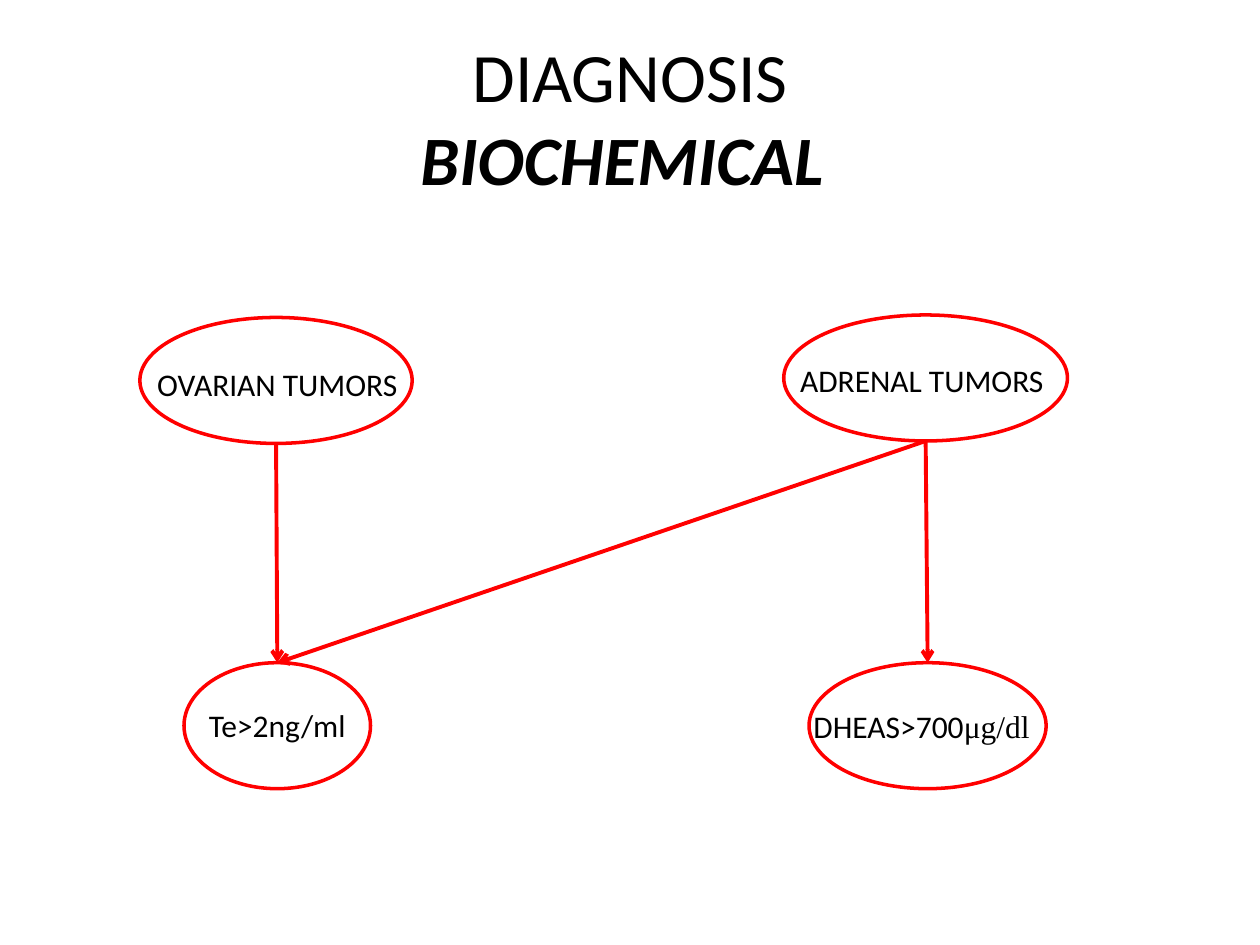
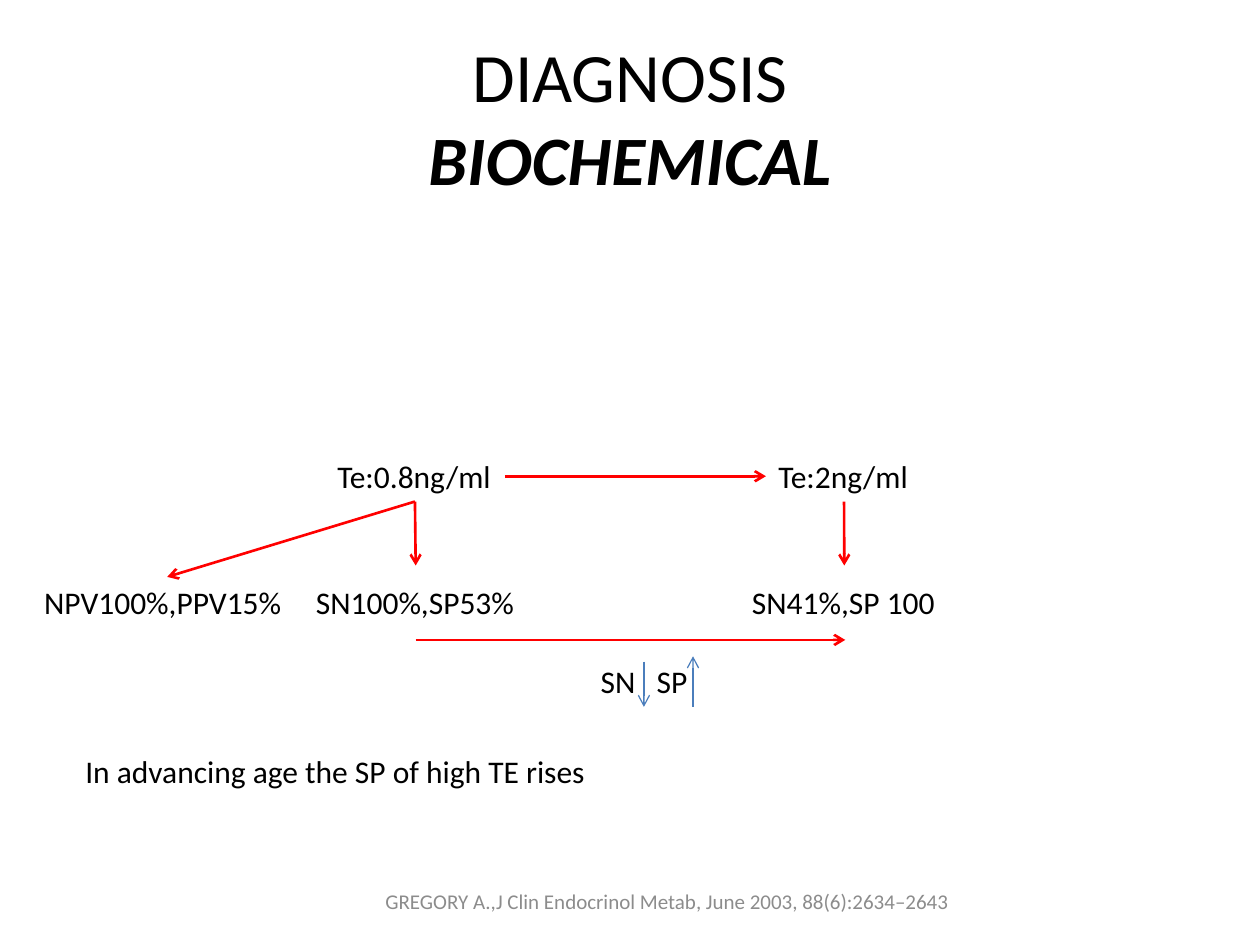
from lxml.etree import SubElement
from pptx import Presentation
from pptx.dml.color import RGBColor
from pptx.enum.shapes import MSO_CONNECTOR, MSO_SHAPE
from pptx.enum.text import MSO_ANCHOR, MSO_AUTO_SIZE, PP_ALIGN
from pptx.oxml.ns import qn
from pptx.util import Cm, Pt

# Shared style
RED, BLUE, BLACK, GREY = "FF0000", "4B7EBC", "000000", "8C8C8C"
FONT, SYMBOL_FONT = "Calibri", "Times New Roman"
TOP, LEFT, BOTTOM, RIGHT = range(4)


def add_text(page, left, top, width, runs, size=18, color=BLACK):
    """Add a one-line text box; runs is a list of (text, font) pairs."""
    box = page.shapes.add_textbox(Cm(left), Cm(top), Cm(width), Cm(1.02))
    box.text_frame.word_wrap = False
    box.text_frame.auto_size = MSO_AUTO_SIZE.SHAPE_TO_FIT_TEXT
    for text, font in runs:
        span = box.text_frame.paragraphs[0].add_run()
        span.text = text
        span.font.name = font
        span.font.size = Pt(size)
        span.font.color.rgb = RGBColor.from_string(color)
    return box


def add_arrow(page, start, end, color=RED, width=1.5):
    """Draw an arrow; each end is an (x, y) point in cm or a (shape, side) joint."""
    arrow = page.shapes.add_connector(MSO_CONNECTOR.STRAIGHT, 0, 0, 0, 0)
    if hasattr(start[0], "shape_id"):
        arrow.begin_connect(*start)
    else:
        arrow.begin_x, arrow.begin_y = Cm(start[0]), Cm(start[1])
    if hasattr(end[0], "shape_id"):
        arrow.end_connect(*end)
    else:
        arrow.end_x, arrow.end_y = Cm(end[0]), Cm(end[1])
    arrow.line.color.rgb = RGBColor.from_string(color)
    arrow.line.width = Pt(width)
    SubElement(arrow.line._get_or_add_ln(), qn("a:tailEnd"), type="arrow")
    SubElement(arrow._element.spPr, qn("a:effectLst"))


deck = Presentation()
deck.slide_width, deck.slide_height = Cm(25.4), Cm(19.05)

# Pages with the common title
pages = []
for subtitle in ("BIOCHEMICAL ", "BIOCHEMICAL"):
    page = deck.slides.add_slide(deck.slide_layouts[5])
    title = page.shapes.title
    title.left, title.top = Cm(1.27), Cm(0.76)
    title.width, title.height = Cm(22.86), Cm(3.18)
    title.text_frame.vertical_anchor = MSO_ANCHOR.MIDDLE
    para = title.text_frame.paragraphs[0]
    para.alignment = PP_ALIGN.CENTER
    for text, strong in (("DIAGNOSIS", False), (subtitle, True)):
        if strong:
            para.add_line_break()
        span = para.add_run()
        span.text = text
        span.font.name = FONT
        span.font.size = Pt(39.6)
        span.font.bold = span.font.italic = strong
        span.font.color.rgb = RGBColor.from_string(BLACK)
    pages.append(page)
tumor_page, cutoff_page = pages

# Slide 1: tumors and their hormone thresholds
ovals = {}
for name, left, top, width, text_left, text_top, text_width, runs in (
    ("ovarian", 2.82, 6.4, 5.49, 2.92, 7.24, 5.38, [("OVARIAN TUMORS", FONT)]),
    ("adrenal", 15.8, 6.35, 5.72, 15.88, 7.16, 5.46, [("ADRENAL TUMORS", FONT)]),
    ("testosterone", 3.71, 13.36, 3.76, 3.96, 14.1, 3.3, [("Te>2ng/ml", FONT)]),
    ("dheas", 16.31, 13.36, 4.78, 16.15, 14.12, 4.9,
     [("DHEAS>700", FONT), ("μg/dl", SYMBOL_FONT)]),
):
    oval = tumor_page.shapes.add_shape(
        MSO_SHAPE.OVAL, Cm(left), Cm(top), Cm(width), Cm(2.54))
    oval.shadow.inherit = False
    oval.fill.background()
    oval.line.color.rgb = RGBColor.from_string(RED)
    oval.line.width = Pt(2)
    ovals[name] = oval
    add_text(tumor_page, text_left, text_top, text_width, runs)

for tumor, hormone in (("ovarian", "testosterone"), ("adrenal", "testosterone"),
                       ("adrenal", "dheas")):
    oval = ovals[tumor]
    foot = ((oval.left + oval.width / 2) / Cm(1), (oval.top + oval.height) / Cm(1))
    add_arrow(tumor_page, foot, (ovals[hormone], TOP), width=2.25)

# Slide 2: cutoffs and their test values
labels = {}
for name, left, top, width, text in (
    ("low cutoff", 6.55, 9.09, 3.63, "Te:0.8ng/ml"),
    ("high cutoff", 15.44, 9.09, 3.15, "Te:2ng/ml"),
    ("predictive values", 0.64, 11.63, 5.46, "NPV100%,PPV15%"),
    ("low values", 6.12, 11.63, 4.55, "SN100%,SP53%"),
    ("high values", 14.91, 11.63, 4.24, "SN41%,SP 100"),
    ("age remark", 1.47, 15.04, 10.87, "In advancing age the SP of high TE rises"),
):
    labels[name] = add_text(cutoff_page, left, top, width, [(text, FONT)])
low, high = labels["low cutoff"], labels["high cutoff"]

# Red arrows between the values
for start, end in (
    ((low, RIGHT), (high, LEFT)),
    ((low, BOTTOM), (8.38, 11.4)),
    ((high, BOTTOM), (17.02, 11.4)),
    ((low, BOTTOM), (labels["predictive values"], TOP)),
    ((8.38, 12.9), (17.04, 12.9)),
):
    add_arrow(cutoff_page, start, end)

# Trend: SN falls, SP rises
trend = add_text(cutoff_page, 11.86, 13.23, 4.24, [("SN\tSP", FONT)])
trend.text_frame.word_wrap = True
tabs = SubElement(trend.text_frame.paragraphs[0]._p.get_or_add_pPr(), qn("a:tabLst"))
SubElement(tabs, qn("a:tab"), pos=str(Cm(1.13)), algn="l")
add_arrow(cutoff_page, (12.98, 13.34), (12.98, 14.25), BLUE, 0.75)
add_arrow(cutoff_page, (13.97, 14.25), (13.97, 13.23), BLUE, 0.75)

# Citation in the footer
citation = add_text(
    cutoff_page, 6.78, 17.65, 13.34,
    [("GREGORY A.,J Clin Endocrinol Metab, June 2003, 88(6):2634–2643", FONT)],
    size=12, color=GREY)
citation.text_frame.word_wrap = True
citation.text_frame.auto_size = MSO_AUTO_SIZE.NONE
citation.text_frame.vertical_anchor = MSO_ANCHOR.MIDDLE
citation.text_frame.paragraphs[0].alignment = PP_ALIGN.CENTER

deck.save("out.pptx")
